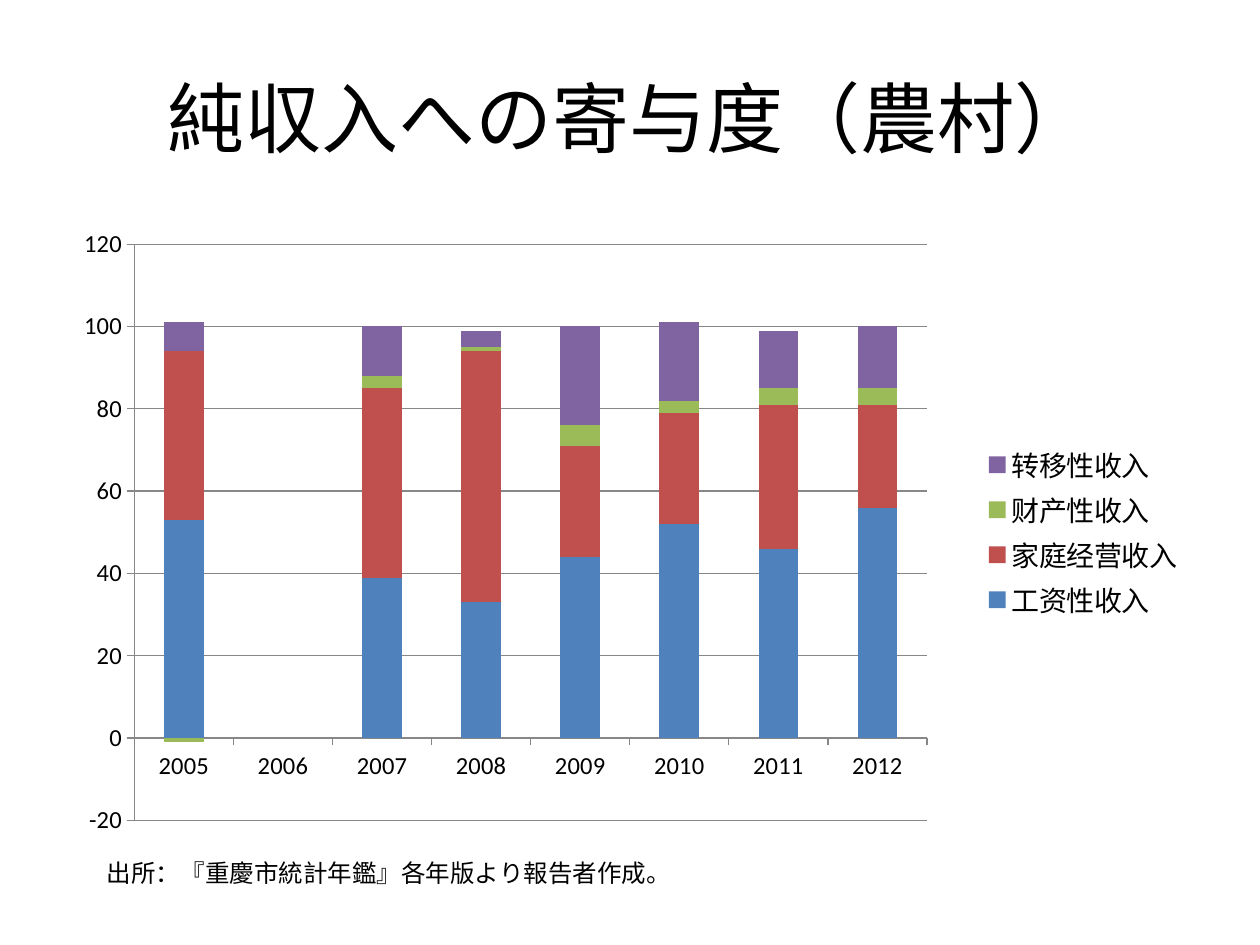
from lxml.etree import SubElement
from pptx import Presentation
from pptx.chart.data import CategoryChartData
from pptx.dml.color import RGBColor
from pptx.enum.chart import XL_CHART_TYPE, XL_LEGEND_POSITION, XL_TICK_MARK
from pptx.enum.text import MSO_ANCHOR, PP_ALIGN
from pptx.oxml.ns import qn
from pptx.util import Pt

EMU_PER_PX = 9144  # 100 px to the inch
FONT = "Calibri"
BLACK = "000000"
AXIS_GRAY = "878787"

YEARS = [str(year) for year in range(2005, 2013)]
INCOME_SERIES = [
    ("工资性收入", "4F81BD", (53, None, 39, 33, 44, 52, 46, 56)),
    ("家庭经营收入", "C0504D", (41, None, 46, 61, 27, 27, 35, 25)),
    ("财产性收入", "9BBB59", (-1, None, 3, 1, 5, 3, 4, 4)),
    ("转移性收入", "8064A2", (7, None, 12, 4, 24, 19, 14, 15)),
]
PLOT_AREA = {"x": 0.063, "y": 0.038, "w": 0.699, "h": 0.924}


def px(length):
    return round(length * EMU_PER_PX)


def color(hex_string):
    return RGBColor.from_string(hex_string)


def set_attributes(target, values):
    for name, value in values.items():
        setattr(target, name, value)


def style_font(font, size):
    set_attributes(font, {"name": FONT, "size": Pt(size)})
    font.color.rgb = color(BLACK)


def add_text(slide, box, text, size, align=PP_ALIGN.LEFT, anchor=MSO_ANCHOR.TOP):
    frame = slide.shapes.add_textbox(*map(px, box)).text_frame
    set_attributes(frame, {"word_wrap": True, "vertical_anchor": anchor})
    para = frame.paragraphs[0]
    para.alignment = align
    span = para.add_run()
    span.text = text
    style_font(span.font, size)


def set_line(line, hex_string):
    line.width = Pt(0.75)
    line.color.rgb = color(hex_string)


def fix_plot_area(chart):
    """Pin the inner plot area to fixed fractions of the chart."""
    plot_area = chart.plots[0]._element.getparent()
    layout = plot_area.find(qn("c:layout"))
    if layout is None:
        layout = SubElement(plot_area, qn("c:layout"))
        plot_area.insert(0, layout)
    manual = SubElement(layout, qn("c:manualLayout"))
    settings = {"layoutTarget": "inner", "xMode": "edge", "yMode": "edge", **PLOT_AREA}
    for name, value in settings.items():
        SubElement(manual, qn(f"c:{name}")).set("val", str(value))


def add_income_chart(slide, box):
    data = CategoryChartData()
    data.categories = YEARS
    for name, _, values in INCOME_SERIES:
        data.add_series(name, values)
    chart = slide.shapes.add_chart(
        XL_CHART_TYPE.COLUMN_STACKED, *map(px, box), data
    ).chart
    style_font(chart.font, 10)
    set_attributes(chart, {"has_title": False, "has_legend": True})

    plot = chart.plots[0]
    set_attributes(plot, {"gap_width": 150, "overlap": 100, "vary_by_categories": False})
    for series, (_, fill, _) in zip(plot.series, INCOME_SERIES):
        series.invert_if_negative = False
        series.format.fill.solid()
        series.format.fill.fore_color.rgb = color(fill)

    for axis in (chart.category_axis, chart.value_axis):
        set_attributes(axis, {
            "major_tick_mark": XL_TICK_MARK.OUTSIDE,
            "minor_tick_mark": XL_TICK_MARK.NONE,
        })
        style_font(axis.tick_labels.font, 14)
        set_line(axis.format.line, AXIS_GRAY)
    set_attributes(chart.value_axis, {
        "minimum_scale": -20,
        "maximum_scale": 120,
        "major_unit": 20,
        "has_major_gridlines": True,
    })
    set_line(chart.value_axis.major_gridlines.format.line, AXIS_GRAY)

    set_attributes(chart.legend, {
        "position": XL_LEGEND_POSITION.RIGHT,
        "include_in_layout": False,
    })
    style_font(chart.legend.font, 16)
    fix_plot_area(chart)


def main():
    deck = Presentation()
    set_attributes(deck, {"slide_width": px(1000), "slide_height": px(750)})
    slide = deck.slides.add_slide(deck.slide_layouts[6])
    add_text(slide, (50, 30, 900, 125), "純収入への寄与度（農村）", 44,
             PP_ALIGN.CENTER, MSO_ANCHOR.MIDDLE)
    add_income_chart(slide, (50, 175, 900, 495))
    add_text(slide, (75, 676, 866, 34),
             "出所：『重慶市統計年鑑』各年版より報告者作成。", 14)
    deck.save("out.pptx")


if __name__ == "__main__":
    main()
